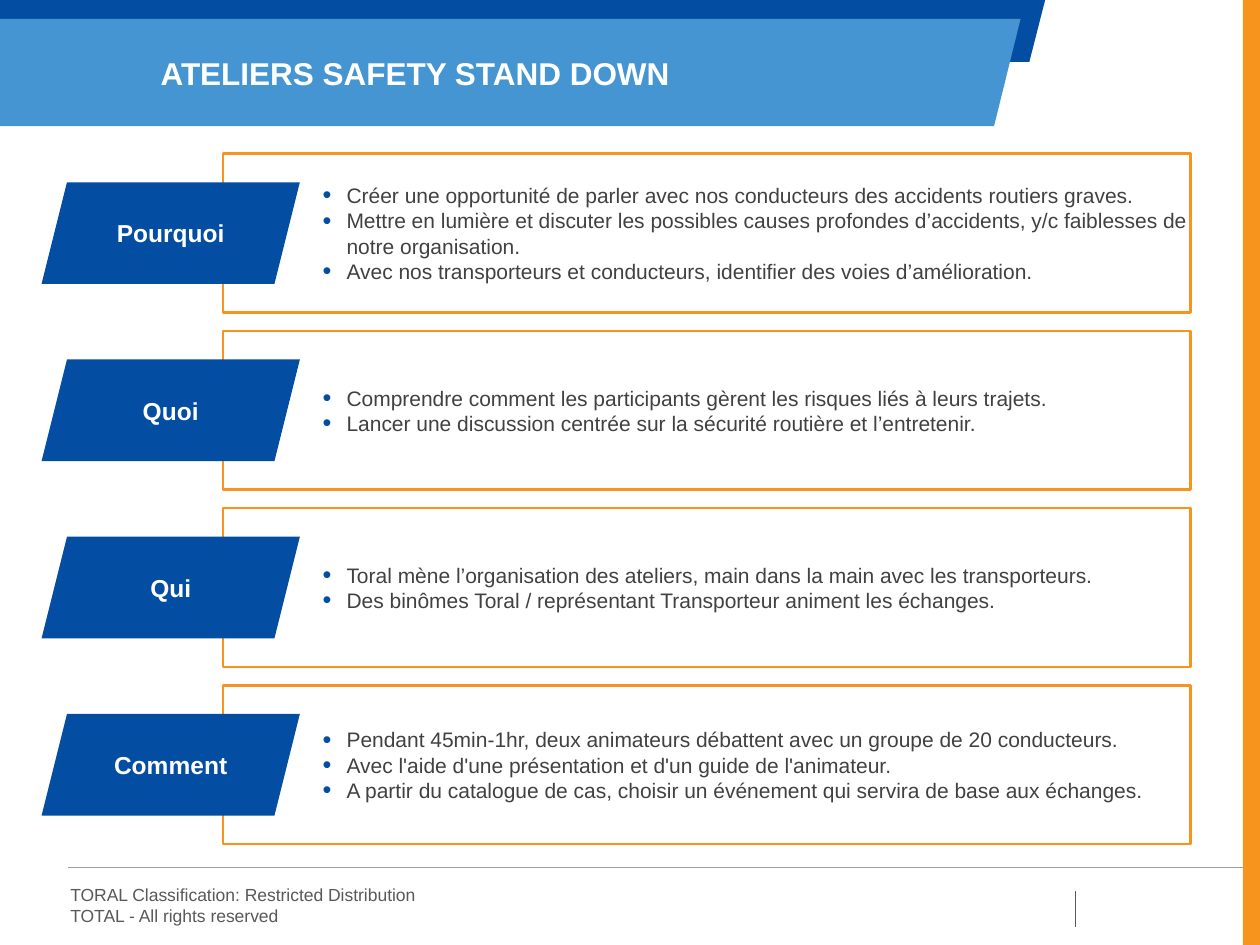
from collections import namedtuple

from lxml import etree
from pptx import Presentation
from pptx.dml.color import RGBColor
from pptx.enum.shapes import MSO_CONNECTOR, MSO_SHAPE
from pptx.enum.text import MSO_ANCHOR, PP_ALIGN
from pptx.oxml.ns import qn
from pptx.util import Inches, Pt

RECTANGLE = MSO_SHAPE.RECTANGLE
PARALLELOGRAM = MSO_SHAPE.PARALLELOGRAM
STRAIGHT = MSO_CONNECTOR.STRAIGHT
MIDDLE = MSO_ANCHOR.MIDDLE
LEFT, CENTER = PP_ALIGN.LEFT, PP_ALIGN.CENTER

NAVY = RGBColor(0x03, 0x4E, 0xA2)
SKY = RGBColor(0x44, 0x95, 0xD1)
ORANGE = RGBColor(0xF7, 0x94, 0x1D)
WHITE = RGBColor(0xFF, 0xFF, 0xFF)
CHARCOAL = RGBColor(0x41, 0x41, 0x41)
GRAY = RGBColor(0x59, 0x59, 0x59)
SILVER = RGBColor(0xA0, 0xA0, 0xA0)

FONT = "Arial"
SLIDE_W, SLIDE_H = Inches(10), Inches(7.5)
COLUMN, ROW = SLIDE_W / 100, SLIDE_H / 75
ROW_GAP = 1.47

Box = namedtuple("Box", "left top width height")

TOPICS = [
    ("Pourquoi", [
        "Créer une opportunité de parler avec nos conducteurs des accidents routiers graves.",
        "Mettre en lumière et discuter les possibles causes profondes d’accidents, y/c faiblesses de notre organisation.",
        "Avec nos transporteurs et conducteurs, identifier des voies d’amélioration.",
    ]),
    ("Quoi", [
        "Comprendre comment les participants gèrent les risques liés à leurs trajets.",
        "Lancer une discussion centrée sur la sécurité routière et l’entretenir.",
    ]),
    ("Qui", [
        "Toral mène l’organisation des ateliers, main dans la main avec les transporteurs.",
        "Des binômes Toral / représentant Transporteur animent les échanges.",
    ]),
    ("Comment", [
        "Pendant 45min-1hr, deux animateurs débattent avec un groupe de 20 conducteurs.",
        "Avec l'aide d'une présentation et d'un guide de l'animateur.",
        "A partir du catalogue de cas, choisir un événement qui servira de base aux échanges.",
    ]),
]


def cols(count):
    """Return the length of a number of grid columns."""
    return round(count * COLUMN)


def rows(count):
    """Return the length of a number of grid rows."""
    return round(count * ROW)


def place(box):
    """Return a grid box as slide lengths."""
    return cols(box.left), rows(box.top), cols(box.width), rows(box.height)


def paint(shape, fill=None, line=None):
    """Set the fill and outline of a shape and drop its shadow."""
    shape.shadow.inherit = False
    if fill is None:
        shape.fill.background()
    else:
        shape.fill.solid()
        shape.fill.fore_color.rgb = fill
    if line is None:
        shape.line.fill.background()
    else:
        shape.line.color.rgb = line
        shape.line.width = Pt(1.5)


def add_bullet(paragraph):
    """Give a paragraph a hanging navy bullet."""
    properties = paragraph._p.get_or_add_pPr()
    properties.set("marL", str(cols(1.9)))
    properties.set("indent", str(-cols(1.9)))
    color = etree.SubElement(properties, qn("a:buClr"))
    etree.SubElement(color, qn("a:srgbClr"), val=str(NAVY))
    etree.SubElement(properties, qn("a:buSzPct"), val="120000")
    etree.SubElement(properties, qn("a:buFont"), typeface=FONT)
    etree.SubElement(properties, qn("a:buChar"), char="•")


def write(frame, lines, size, color, bold=False, align=LEFT, bulleted=False):
    """Write one paragraph per line into a wrapping text frame."""
    frame.word_wrap = True
    for index, line in enumerate(lines):
        paragraph = frame.add_paragraph() if index else frame.paragraphs[0]
        paragraph.alignment = align
        if bulleted:
            add_bullet(paragraph)
        run = paragraph.add_run()
        run.text = line
        run.font.name = FONT
        run.font.size = Pt(size)
        run.font.bold = bold
        run.font.color.rgb = color


def set_margins(frame, left=0, top=0, right=0, bottom=0):
    """Set the inner margins of a text frame in grid units."""
    frame.margin_left, frame.margin_right = cols(left), cols(right)
    frame.margin_top, frame.margin_bottom = rows(top), rows(bottom)


def add_band(slide, box, slant, fill):
    """Draw a band whose right end slants inward toward its foot."""
    left, top, width, height = place(box)
    right, bottom = left + width, top + height
    outline = slide.shapes.build_freeform(left, top)
    outline.add_line_segments(
        [(right, top), (right - cols(slant), bottom), (left, bottom)])
    paint(outline.convert_to_shape(), fill)


def add_rule(slide, left, top, right, bottom, color):
    """Draw a thin straight rule between two grid points."""
    rule = slide.shapes.add_connector(
        STRAIGHT, cols(left), rows(top), cols(right), rows(bottom))
    rule.line.color.rgb = color
    rule.line.width = Pt(0.75)
    etree.SubElement(rule._element.spPr, qn("a:effectLst"))


def add_side_bar(slide, box):
    """Draw the orange bar on the slide's edge."""
    paint(slide.shapes.add_shape(RECTANGLE, *place(box)), ORANGE)


def add_header(slide, box):
    """Draw the two slanted bands and the title."""
    add_band(slide, Box(box.left, box.top, box.width, box.height * 0.49), 1.25, NAVY)
    add_band(slide, Box(box.left, box.top + box.height * 0.15,
                        box.width - 1.95, box.height * 0.85), 2.1, SKY)
    title = slide.shapes.add_textbox(
        *place(Box(box.left + 12.75, box.top + box.height * 0.43, 60, 3))).text_frame
    set_margins(title)
    write(title, ["ATELIERS SAFETY STAND DOWN"], 18, WHITE, bold=True)


def add_topic(slide, box, label, points):
    """Draw one framed list with its slanted label."""
    frame = slide.shapes.add_shape(RECTANGLE, *place(
        Box(box.left + 14.4, box.top, box.width - 14.4, box.height)))
    paint(frame, line=ORANGE)
    frame.text_frame.vertical_anchor = MIDDLE
    set_margins(frame.text_frame, left=7.9, top=0.5, bottom=0.5)
    write(frame.text_frame, points, 12, CHARCOAL, bulleted=True)

    tag_height = box.height * 0.64
    tag = slide.shapes.add_shape(PARALLELOGRAM, *place(
        Box(box.left, box.top + (box.height - tag_height) / 2, 20.5, tag_height)))
    paint(tag, NAVY)
    tag.text_frame.vertical_anchor = MIDDLE
    write(tag.text_frame, [label], 14, WHITE, bold=True, align=CENTER)


def add_topics(slide, box):
    """Stack the topics at equal heights with equal gaps."""
    height = (box.height - ROW_GAP * (len(TOPICS) - 1)) / len(TOPICS)
    for index, (label, points) in enumerate(TOPICS):
        top = box.top + index * (height + ROW_GAP)
        add_topic(slide, Box(box.left, top, box.width, height), label, points)


def add_footer(slide, box):
    """Draw the footer rules and the classification text."""
    right = box.left + box.width
    add_rule(slide, box.left, box.top, right, box.top, SILVER)
    add_rule(slide, right - 13.35, box.top + 1.85, right - 13.35, box.top + 4.75, GRAY)
    notice = slide.shapes.add_textbox(
        *place(Box(box.left - 0.8, box.top + 0.85, 53.9, 4.4))).text_frame
    write(notice, ["TORAL Classification: Restricted Distribution",
                   "TOTAL - All rights reserved"], 10, GRAY)


def main():
    """Build the slide and save it."""
    deck = Presentation()
    deck.slide_width, deck.slide_height = SLIDE_W, SLIDE_H
    slide = deck.slides.add_slide(deck.slide_layouts[6])
    add_side_bar(slide, Box(98.65, 0, 1.35, 75))
    add_footer(slide, Box(5.4, 68.85, 93.3, 6.15))
    add_header(slide, Box(0, 0, 82.95, 10))
    add_topics(slide, Box(3.3, 12.2, 91.2, 54.8))
    deck.save("out.pptx")


if __name__ == "__main__":
    main()
